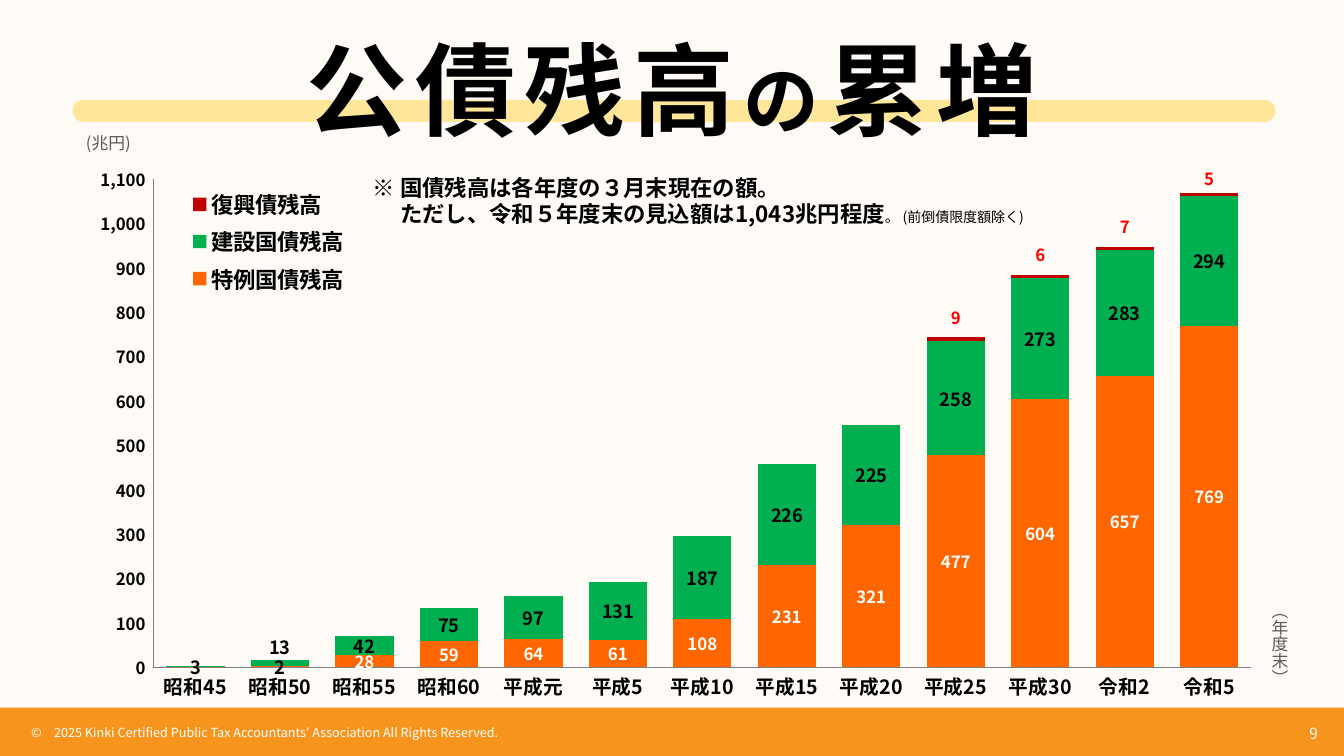
from lxml import etree
from pptx import Presentation
from pptx import util as u
from pptx.chart.data import CategoryChartData
from pptx.dml.color import RGBColor
from pptx.enum import chart as ch, shapes, text
from pptx.oxml import parse_xml
from pptx.oxml.ns import nsdecls, qn

# Content
FONT = "Noto Sans CJK JP"
BLACK, WHITE = RGBColor(0, 0, 0), RGBColor(255, 255, 255)
CREAM, YELLOW = RGBColor(0xFE, 0xFB, 0xF6), RGBColor(0xFF, 0xE6, 0x99)
AMBER, GRAY = RGBColor(0xF7, 0x94, 0x1E), RGBColor(0x59, 0x59, 0x59)
ORANGE, GREEN = RGBColor(0xFF, 0x66, 0), RGBColor(0, 0xB0, 0x50)
CRIMSON, RED = RGBColor(0xC0, 0, 0), RGBColor(255, 0, 0)
AXIS_GRAY = RGBColor(0x80, 0x80, 0x80)

YEARS = ["昭和45", "昭和50", "昭和55", "昭和60", "平成元", "平成5", "平成10",
         "平成15", "平成20", "平成25", "平成30", "令和2", "令和5"]
# name, values, fill, label size, label colour
BONDS = [
    ("特例国債残高", (0, 2, 28, 59, 64, 61, 108, 231, 321, 477, 604, 657, 769),
     ORANGE, 12, WHITE),
    ("建設国債残高", (3, 13, 42, 75, 97, 131, 187, 226, 225, 258, 273, 283, 294),
     GREEN, 13, BLACK),
    ("復興債残高", (0, 0, 0, 0, 0, 0, 0, 0, 0, 9, 6, 7, 5), CRIMSON, 12, RED),
]
# (series, year): size, colour, upward shift as a share of the chart height
MOVED_LABELS = {
    (0, 1): (13, BLACK, 0), (1, 1): (13, BLACK, 0.03),
    (2, 9): (12, RED, 0.04), (2, 10): (12, RED, 0.04),
    (2, 11): (12, RED, 0.04), (2, 12): (12, RED, 0.03),
}
TITLE = [("公債残高", 72), ("の", 54), ("累増", 72)]
NOTE = [
    [("※ 国債残高は各年度の３月末現在の額。", 16, True)],
    [("ただし、令和５年度末の見込額は1,043兆円程度", 16, True),
     ("。 ", 10.5, False), ("(前倒債限度額除く)", 10, False)],
]
COPYRIGHT = ("©　2025 Kinki Certified Public Tax Accountants' Association "
             "All Rights Reserved.")

prs = Presentation()
prs.slide_width, prs.slide_height = u.Inches(13.33), u.Inches(7.5)
slide = prs.slides.add_slide(prs.slide_layouts[6])
slide.background.fill.solid()
slide.background.fill.fore_color.rgb = CREAM


def inches(*lengths):
    return [u.Inches(n) for n in lengths]


def style(font, size, color, bold=False):
    font.size, font.bold, font.name = u.Pt(size), bold, FONT
    font.color.rgb = color
    etree.SubElement(font._rPr, qn("a:ea")).set("typeface", FONT)


def add_band(kind, color, *place):
    band = slide.shapes.add_shape(kind, *inches(*place))
    band.shadow.inherit = False
    band.fill.solid()
    band.fill.fore_color.rgb = color
    band.line.fill.background()
    return band


def add_text(place, paragraphs, color, align=text.PP_ALIGN.LEFT,
             anchor=text.MSO_ANCHOR.MIDDLE):
    frame = slide.shapes.add_textbox(*inches(*place)).text_frame
    frame.word_wrap, frame.vertical_anchor = True, anchor
    for i, runs in enumerate(paragraphs):
        para = frame.add_paragraph() if i else frame.paragraphs[0]
        para.alignment = align
        for words, size, bold in runs:
            run = para.add_run()
            run.text = words
            style(run.font, size, color, bold)
    return frame


def set_layout(parent_layout, **shares):
    """Fill a c:layout element with a manual layout."""
    manual = etree.SubElement(parent_layout, qn("c:manualLayout"))
    for tag, value in shares.items():
        etree.SubElement(manual, qn("c:" + tag)).set("val", str(value))


def new_layout(**shares):
    layout = parse_xml(f"<c:layout {nsdecls('c')}/>")
    set_layout(layout, **shares)
    return layout


# Note above the bars
note = add_text((3.6, 1.67, 7.32, 0.64), NOTE, BLACK)
note.paragraphs[1]._p.get_or_add_pPr().set("marL", str(u.Inches(0.27)))

# Stacked chart
data = CategoryChartData()
data.categories = YEARS
for name, values, *_ in BONDS:
    data.add_series(name, values)
chart = slide.shapes.add_chart(ch.XL_CHART_TYPE.COLUMN_STACKED,
                               *inches(0.76, 1.54, 11.89, 5.52), data).chart
style(chart.font, 10, BLACK)
chart.has_title = False
plot = chart.plots[0]
plot.gap_width, plot.overlap, plot.vary_by_categories = 45, 100, False

for axis, size in ((chart.category_axis, 14), (chart.value_axis, 12)):
    axis.has_major_gridlines = False
    axis.major_tick_mark = axis.minor_tick_mark = ch.XL_TICK_MARK.NONE
    axis.format.line.color.rgb = AXIS_GRAY
    axis.format.line.width = u.Pt(0.75)
    style(axis.tick_labels.font, size, BLACK, True)
amounts = chart.value_axis
amounts.minimum_scale, amounts.maximum_scale, amounts.major_unit = 0, 1100, 100
amounts.tick_labels.number_format = r"#,##0_);[Red]\(#,##0\)"
amounts.tick_labels.number_format_is_linked = False

for s, (series, bond) in enumerate(zip(plot.series, BONDS)):
    _, values, fill, size, color = bond
    series.format.fill.solid()
    series.format.fill.fore_color.rgb = fill
    labels = series.data_labels
    labels.show_value, labels.position = True, ch.XL_LABEL_POSITION.CENTER
    style(labels.font, size, color, True)
    for i, value in enumerate(values):
        if value and (s, i) not in MOVED_LABELS:
            continue
        label = series.points[i].data_label
        size_i, color_i, rise = MOVED_LABELS.get((s, i), (size, color, 0))
        style(label.font, size_i, color_i, True)
        label.position = ch.XL_LABEL_POSITION.CENTER
        entry = series._element.xpath(f"c:dLbls/c:dLbl[c:idx/@val='{i}']")[0]
        if not value:
            for child in list(entry)[1:]:
                entry.remove(child)
            etree.SubElement(entry, qn("c:delete")).set("val", "1")
        elif rise:
            entry.insert(1, new_layout(x=0, y=-rise))

# Legend and plot area placed as shares of the chart
chart.has_legend = True
legend = chart.legend
legend.position, legend.include_in_layout = ch.XL_LEGEND_POSITION.LEFT, False
style(legend.font, 16, BLACK, True)
for old in legend._element.findall(qn("c:layout")):
    legend._element.remove(old)
legend._element.find(qn("c:legendPos")).addnext(
    new_layout(xMode="edge", yMode="edge", x=0.09, y=0.05, w=0.14, h=0.21))
plot_area = chart._chartSpace.chart.plotArea
for old in plot_area.findall(qn("c:layout")):
    plot_area.remove(old)
plot_area.insert(0, new_layout(layoutTarget="inner", xMode="edge", yMode="edge",
                               x=0.064, y=0.043, w=0.916, h=0.877))

# Axis units
add_text((0.6, 1.23, 0.95, 0.37), [[("(兆円)", 12, False)]], GRAY,
         text.PP_ALIGN.CENTER)
years_unit = add_text((12.49, 5.88, 0.4, 1.26), [[("（年度末）", 12, False)]], GRAY,
                      text.PP_ALIGN.CENTER)
years_unit._txBody.bodyPr.set("vert", "eaVert")

# Title over its highlight
highlight = add_band(shapes.MSO_SHAPE.ROUNDED_RECTANGLE, YELLOW,
                     0.72, 0.99, 11.93, 0.22)
highlight.adjustments[0] = 0.5
title = add_text((0, 0.36, 13.33, 1.18),
                 [[(words, size, True) for words, size in TITLE]], BLACK,
                 text.PP_ALIGN.CENTER, text.MSO_ANCHOR.TOP).paragraphs[0]
title.line_spacing = 0.9
for run in title.runs:
    run.font._rPr.set("spc", "600")

# Footer
add_band(shapes.MSO_SHAPE.RECTANGLE, AMBER, 0, 7.02, 13.33, 0.48)
add_text((0.21, 7.14, 9.93, 0.25), [[(COPYRIGHT, 9, False)]], WHITE,
         anchor=text.MSO_ANCHOR.TOP)
add_text((12.16, 7.16, 1.01, 0.24), [[("9", 11, False)]], WHITE,
         text.PP_ALIGN.RIGHT)

prs.save("out.pptx")
